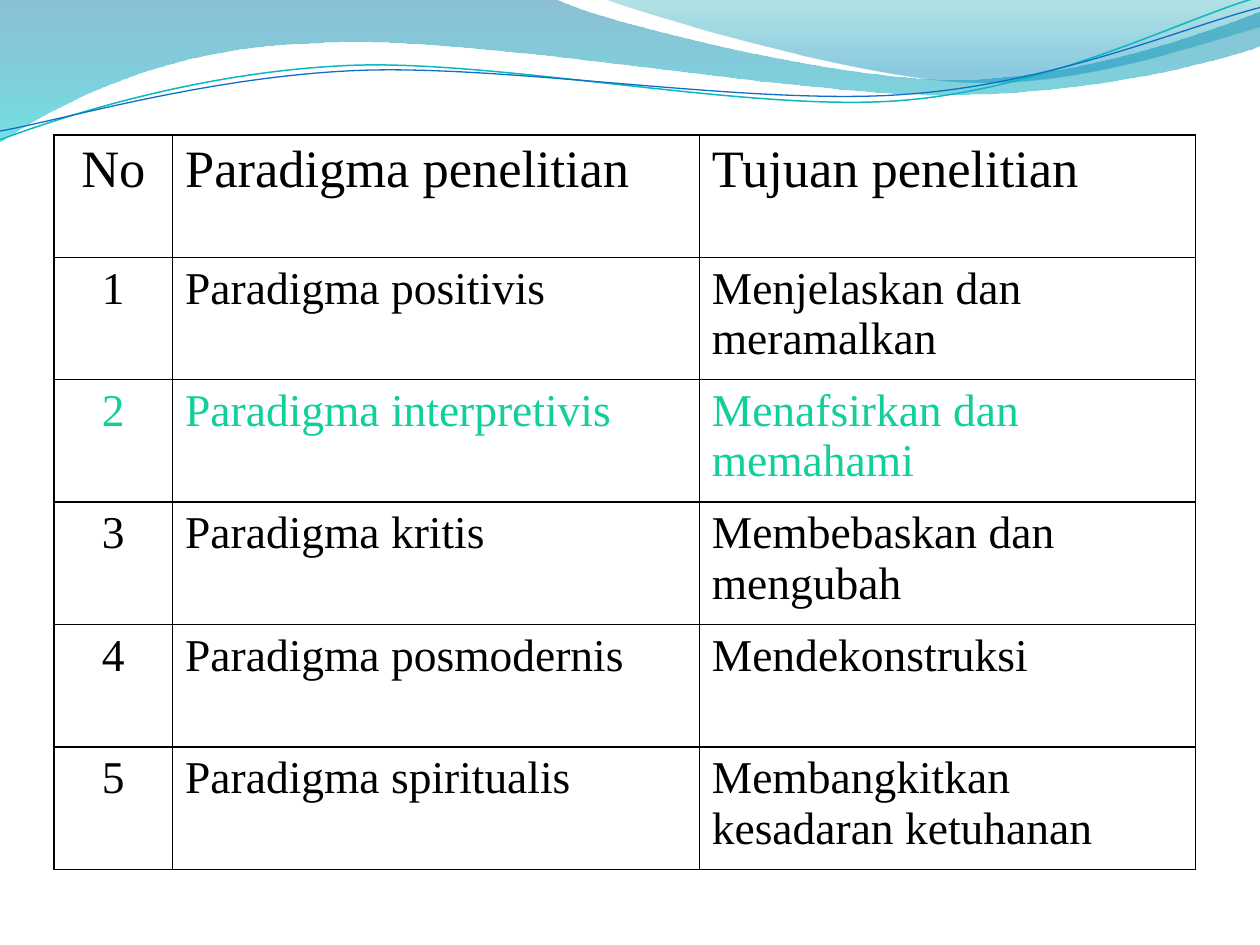
import pptx
import pptx.util
import pptx.dml.color
import pptx.enum.text
from lxml import etree

Inches, Pt = pptx.util.Inches, pptx.util.Pt
ALIGN = pptx.enum.text.PP_ALIGN
NS = "http://schemas.openxmlformats.org/drawingml/2006/main"

# Table content
FONT, BLACK, GREEN = "Times New Roman", "000000", "10CF9B"
ROWS = [
    ("No", "Paradigma penelitian", "Tujuan penelitian"),
    ("1", "Paradigma positivis", "Menjelaskan dan meramalkan"),
    ("2", "Paradigma interpretivis", "Menafsirkan dan memahami"),
    ("3", "Paradigma kritis", "Membebaskan dan mengubah"),
    ("4", "Paradigma posmodernis", "Mendekonstruksi"),
    ("5", "Paradigma spiritualis", "Membangkitkan kesadaran ketuhanan"),
]
ACCENT = 2
LEFT, TOP, TALL = 0.43, 1.07, 5.83
WIDE = (0.94, 4.18, 3.94)

# Waves: parts, where one point ends a line and three make a curve;
# then gradient stops (position, colour, opacity in percent)
WAVES = [
    ([[(0, 0)], [(4.4, -0.01)],
      [(4.76, 0.17), (6.64, 0.63), (7.58, 0.63)],
      [(8.53, 0.63), (9.58, 0.26), (10, 0.09)],
      [(10.01, 0.36)],
      [(9.83, 0.44), (8.7, 0.76), (7.46, 0.75)],
      [(6.22, 0.75), (3.82, 0.28), (2.57, 0.34)],
      [(1.29, 0.36), (0.46, 0.83), (-0.01, 1.13)]],
     [(0, "0074A1", 45), (1, "00C6CF", 55)]),
    ([[(4.79, -0.01)],
      [(5.09, 0.11), (6.82, 0.62), (7.69, 0.65)],
      [(8.56, 0.69), (9.61, 0.32), (10, 0.21)],
      [(10, 0)]],
     [(0, "00A1A9", 30), (0.8, "008BBF", 45)]),
]
# Thin lines: parts, colour, width
LINES = [
    ([[(0, 1.11)],
      [(0.48, 0.93), (1.58, 0.57), (2.77, 0.52)],
      [(3.95, 0.47), (5.93, 0.89), (7.13, 0.8)],
      [(8.33, 0.71), (9.38, 0.15), (9.98, -0.02)]], "0AB8BF", 0.85),
    ([[(0, 1.04)],
      [(0.47, 0.96), (1.64, 0.61), (2.83, 0.56)],
      [(4.03, 0.51), (5.97, 0.84), (7.17, 0.75)],
      [(8.36, 0.67), (9.41, 0.21), (10, 0.06)]], "0F6FC6", 0.75),
]


def paint(color, code):
    color.rgb = pptx.dml.color.RGBColor.from_string(code)


def draw(slide, parts, close):
    """Build an outline, then join each set of three points to a curve."""
    dots = [(Inches(x), Inches(y)) for part in parts for x, y in part]
    pen = slide.shapes.build_freeform(*dots[0])
    pen.add_line_segments(dots[1:], close=close)
    shape = pen.convert_to_shape()
    shape.shadow.inherit = False
    legs = iter(list(shape._element.iter(f"{{{NS}}}lnTo")))
    for part in parts[1:]:
        first, *rest = [next(legs) for dot in part]
        if rest:
            first.tag = f"{{{NS}}}cubicBezTo"
        for leg in rest:
            first.append(leg[0])
            leg.getparent().remove(leg)
    return shape


def shade(shape, stops):
    """Fill from top to bottom with see-through colours."""
    shape.line.fill.background()
    shape.fill.gradient()
    shape.fill.gradient_angle = 270
    for stop, (place, code, alpha) in zip(shape.fill.gradient_stops, stops):
        stop.position = place
        paint(stop.color, code)
    marks = shape.fill._xPr.iter(f"{{{NS}}}srgbClr")
    for mark, (place, code, alpha) in zip(marks, stops):
        etree.SubElement(mark, f"{{{NS}}}alpha", val=str(alpha * 1000))


def frame(cell):
    """Give a cell a thin black border on all sides and no fill."""
    cell.fill.background()
    props = cell._tc.get_or_add_tcPr()
    for i, side in enumerate(("lnL", "lnR", "lnT", "lnB")):
        edge = etree.Element(f"{{{NS}}}{side}", w=str(Pt(1)))
        fill = etree.SubElement(edge, f"{{{NS}}}solidFill")
        etree.SubElement(fill, f"{{{NS}}}srgbClr", val=BLACK)
        props.insert(i, edge)


def write(cell, text, row, col):
    para = cell.text_frame.paragraphs[0]
    if col == 0:
        para.alignment = ALIGN.CENTER
    elif col == 1 or row == 0:
        para.alignment = ALIGN.JUSTIFY
    else:
        para.alignment = ALIGN.LEFT
    run = para.add_run()
    run.text = text
    run.font.name = FONT
    run.font.size = Pt(26 if row else 30)
    paint(run.font.color, GREEN if row == ACCENT else BLACK)


def main():
    deck = pptx.Presentation()
    deck.slide_width, deck.slide_height = Inches(10), Inches(7.5)
    slide = deck.slides.add_slide(deck.slide_layouts[6])

    # Waves along the top
    for parts, stops in WAVES:
        shade(draw(slide, parts, True), stops)
    for parts, code, width in LINES:
        shape = draw(slide, parts, False)
        shape.fill.background()
        paint(shape.line.color, code)
        shape.line.width = Pt(width)

    # Table
    table = slide.shapes.add_table(
        len(ROWS), len(WIDE), Inches(LEFT), Inches(TOP),
        Inches(sum(WIDE)), Inches(TALL)).table
    table.first_row = table.horz_banding = False
    for col, width in zip(table.columns, WIDE):
        col.width = Inches(width)
    for r, texts in enumerate(ROWS):
        table.rows[r].height = Inches(TALL / len(ROWS))
        for c, text in enumerate(texts):
            frame(table.cell(r, c))
            write(table.cell(r, c), text, r, c)

    deck.save("out.pptx")


if __name__ == "__main__":
    main()
